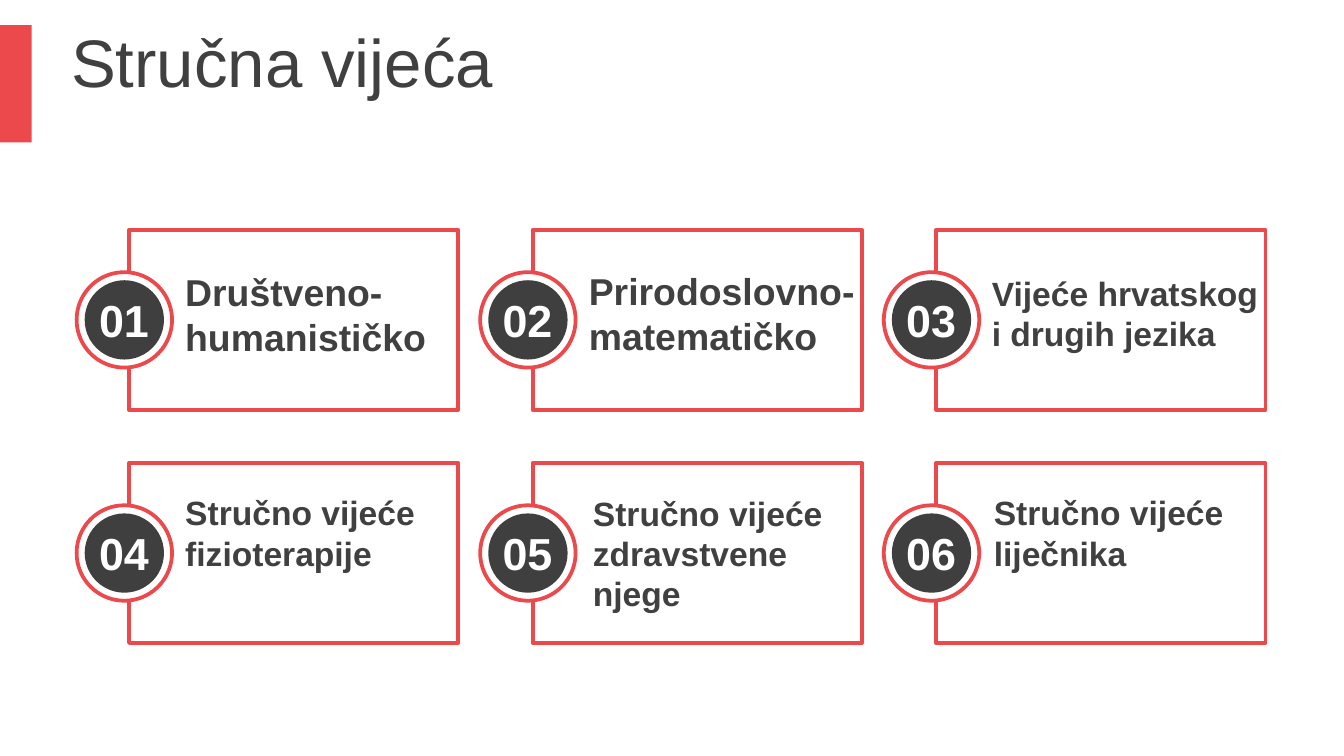
from dataclasses import dataclass

from pptx import Presentation
from pptx import util as u
from pptx.dml.color import RGBColor
from pptx.enum import shapes, text

RED = RGBColor(0xEB, 0x49, 0x4B)
INK = RGBColor(0x40, 0x40, 0x40)
DISC = RGBColor(0x3F, 0x3F, 0x3F)
WHITE = RGBColor(0xFF, 0xFF, 0xFF)
FONT = "Arial"

SLIDE_WIDTH = u.Inches(10)
SLIDE_HEIGHT = SLIDE_WIDTH * 9 // 16
MODULE = SLIDE_WIDTH / 100
CARDS_PER_ROW = 3
FIRST_COLUMN, FIRST_ROW = 5.7, 17.1
COLUMN_STEP, ROW_STEP = 30.03, 17.35


@dataclass(frozen=True)
class Box:
    column: float
    row: float
    columns: float
    rows: float

    def shifted(self, column: float, row: float) -> "Box":
        return Box(self.column + column, self.row + row, self.columns, self.rows)

    def emu(self) -> list[int]:
        return [round(n * MODULE) for n in (self.column, self.row, self.columns, self.rows)]


@dataclass(frozen=True)
class Council:
    name: str
    size: int
    label: Box


ACCENT = Box(0, 1.87, 2.35, 8.74)
TITLE = Box(4.3, 1.35, 76.4, 6.3)
FRAME = Box(3.9, 0, 24.5, 13.4)
RING = Box(0, 3.15, 7.1, 7.1)
CORE = Box(0.6, 3.75, 5.9, 5.9)
NUMBER = Box(0.62, 4.2, 5.8, 5)

COUNCILS = [
    Council("Društveno-humanističko", 20, Box(7.1, 2.4, 28.6, 7.7)),
    Council("Prirodoslovno-matematičko", 20, Box(7.1, 2.35, 22.3, 7.7)),
    Council("Vijeće hrvatskog\vi drugih jezika", 18, Box(7.05, 2.65, 24.4, 7.1)),
    Council("Stručno vijeće fizioterapije", 18, Box(7.1, 1.62, 19.9, 7.1)),
    Council("Stručno vijeće zdravstvene njege", 18, Box(7.4, 1.65, 19.9, 10.1)),
    Council("Stručno vijeće liječnika", 18, Box(7.2, 1.62, 19.9, 7.1)),
]


def write(shape, words: str, *, size: int, color: RGBColor = INK, bold: bool = False,
          align=text.PP_ALIGN.LEFT, wrap: bool = True,
          fit=text.MSO_AUTO_SIZE.SHAPE_TO_FIT_TEXT) -> None:
    frame = shape.text_frame
    frame.text = words
    frame.word_wrap = wrap
    frame.auto_size = fit
    frame.vertical_anchor = text.MSO_ANCHOR.MIDDLE
    paragraph = frame.paragraphs[0]
    paragraph.alignment = align
    for run in paragraph.runs:
        run.font.name = FONT
        run.font.size = u.Pt(size)
        run.font.bold = bold
        run.font.color.rgb = color


def draw(parent, kind, box: Box, fill: RGBColor, line: RGBColor | None = None) -> None:
    shape = parent.add_shape(kind, *box.emu())
    shape.shadow.inherit = False
    shape.fill.solid()
    shape.fill.fore_color.rgb = fill
    if line is None:
        shape.line.fill.background()
    else:
        shape.line.color.rgb = line
        shape.line.width = u.Pt(2)


def draw_card(canvas, council: Council, index: int) -> None:
    row, column = divmod(index, CARDS_PER_ROW)
    corner = FIRST_COLUMN + column * COLUMN_STEP, FIRST_ROW + row * ROW_STEP
    draw(canvas, shapes.MSO_SHAPE.RECTANGLE, FRAME.shifted(*corner), WHITE, RED)
    label = canvas.add_textbox(*council.label.shifted(*corner).emu())
    write(label, council.name, size=council.size, bold=True)
    badge = canvas.add_group_shape().shapes
    draw(badge, shapes.MSO_SHAPE.OVAL, RING.shifted(*corner), WHITE, RED)
    draw(badge, shapes.MSO_SHAPE.OVAL, CORE.shifted(*corner), DISC)
    number = badge.add_textbox(*NUMBER.shifted(*corner).emu())
    write(number, f"{index + 1:02}", size=24, color=WHITE, bold=True,
          align=text.PP_ALIGN.CENTER, wrap=False)


def main() -> None:
    deck = Presentation()
    deck.slide_width, deck.slide_height = SLIDE_WIDTH, SLIDE_HEIGHT
    slide = deck.slides.add_slide(deck.slide_layouts.get_by_name("Title Only"))
    draw(slide.shapes, shapes.MSO_SHAPE.RECTANGLE, ACCENT, RED)
    heading = slide.shapes.title
    heading.left, heading.top, heading.width, heading.height = TITLE.emu()
    write(heading, "Stručna vijeća", size=36, fit=text.MSO_AUTO_SIZE.NONE)
    for index, council in enumerate(COUNCILS):
        draw_card(slide.shapes, council, index)
    deck.save("out.pptx")


if __name__ == "__main__":
    main()
